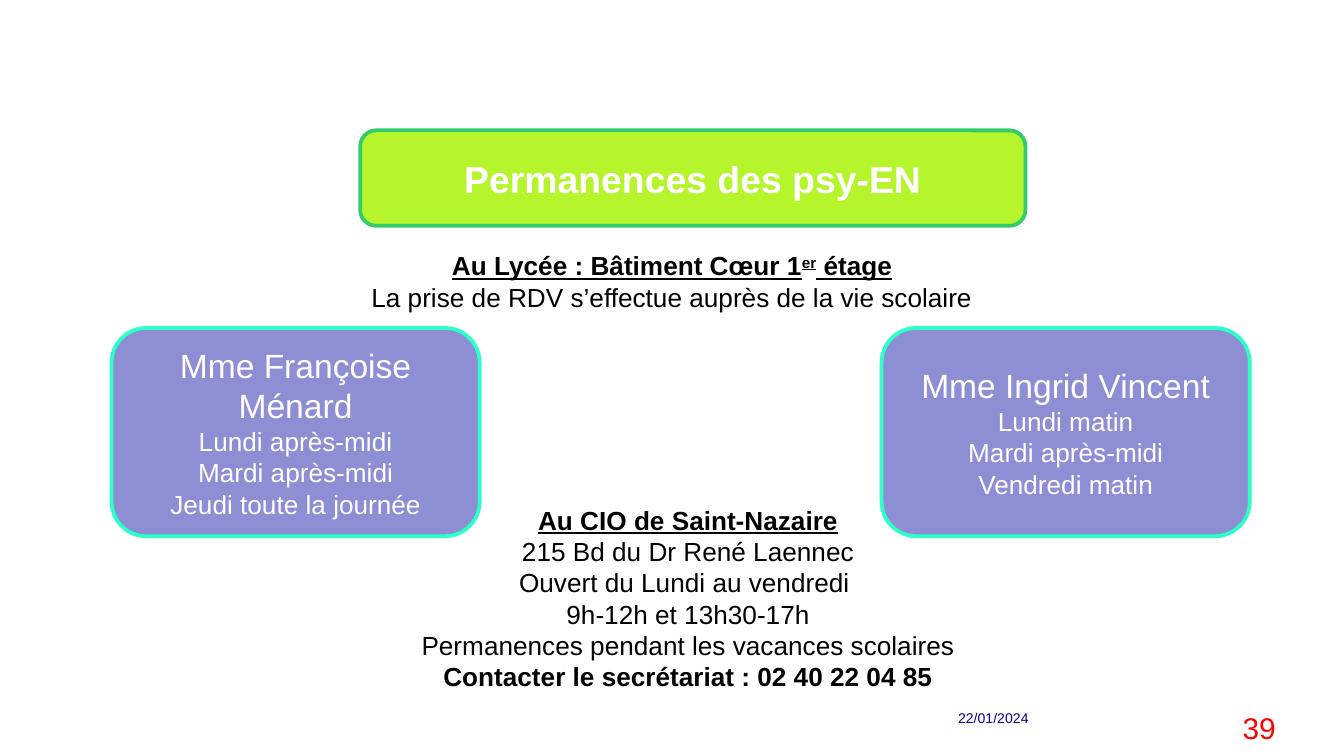
from pptx import Presentation, util as u
from pptx.dml.color import RGBColor
from pptx.enum import shapes, text

BLACK = RGBColor(0x00, 0x00, 0x00)
WHITE = RGBColor(0xFF, 0xFF, 0xFF)
RED = RGBColor(0xFF, 0x00, 0x00)
NAVY = RGBColor(0x00, 0x00, 0x91)
LIME = RGBColor(0xB6, 0xF4, 0x2C)
GREEN = RGBColor(0x34, 0xCB, 0x6A)
LAVENDER = RGBColor(0x8E, 0x8E, 0xD5)
AQUA = RGBColor(0x2C, 0xFF, 0xC8)

BANNER = "Permanences des psy-EN"
HEADING = dict(bold=True, underline=True)

# A line is a list of (text, format) runs
SCHOOL = [
    [("Au Lycée : Bâtiment Cœur 1", HEADING),
     ("er", dict(HEADING, baseline=30000)),
     (" étage", HEADING)],
    [("La prise de RDV s’effectue auprès de la vie scolaire", {})],
]
CENTRE = [
    [("Au CIO de Saint-Nazaire", HEADING)],
    [("215 Bd du Dr René Laennec", {})],
    [("Ouvert du Lundi au vendredi ", {})],
    [("9h-12h et 13h30-17h", {})],
    [("Permanences pendant les vacances scolaires", {})],
    [("Contacter le secrétariat : 02 40 22 04 85", dict(bold=True))],
]
COUNSELLORS = [
    ("Mme Françoise Ménard",
     ["Lundi après-midi", "Mardi après-midi", "Jeudi toute la journée"]),
    ("Mme Ingrid Vincent",
     ["Lundi matin", "Mardi après-midi", "Vendredi matin"]),
]
DATE, NUMBER = "22/01/2024", "39"

SLIDE_WIDTH = 10
SLIDE_HEIGHT = SLIDE_WIDTH * 9 / 16
CARD_LEFT, CARD_TOP, CARD_WIDTH, CARD_HEIGHT = 0.83, 2.44, 2.74, 1.55
CARD_STEP = 5.73
FOOTER_LEFT, FOOTER_TOP, FOOTER_WIDTH, FOOTER_HEIGHT = 7.03, 5.23, 1.28, 0.39


def add_run(paragraph, content, size=14, color=BLACK, bold=False,
            underline=False, baseline=0):
    run = paragraph.add_run()
    run.text = content
    font = run.font
    font.name, font.size = "Arial", u.Pt(size)
    font.bold, font.underline = bold, underline
    font.color.rgb = color
    if baseline:
        font._element.set("baseline", str(baseline))


def write(shape, lines, align=text.PP_ALIGN.CENTER,
          anchor=text.MSO_ANCHOR.TOP, **style):
    """Fill a shape with lines of runs; run formats override style."""
    frame = shape.text_frame
    frame.word_wrap = True
    frame.vertical_anchor = anchor
    for index, line in enumerate(lines):
        paragraph = frame.add_paragraph() if index else frame.paragraphs[0]
        paragraph.alignment = align
        for content, run_style in line:
            add_run(paragraph, content, **{**style, **run_style})


def add_text(slide, box, lines, **style):
    write(slide.shapes.add_textbox(*map(u.Inches, box)), lines, **style)


def add_panel(slide, box, lines, fill, outline, **style):
    panel = slide.shapes.add_shape(
        shapes.MSO_SHAPE.ROUNDED_RECTANGLE, *map(u.Inches, box))
    panel.fill.solid()
    panel.fill.fore_color.rgb = fill
    panel.line.color.rgb = outline
    panel.line.width = u.Pt(2)
    panel.shadow.inherit = False
    write(panel, lines, anchor=text.MSO_ANCHOR.MIDDLE, color=WHITE, **style)


def main():
    presentation = Presentation()
    presentation.slide_width = u.Inches(SLIDE_WIDTH)
    presentation.slide_height = u.Inches(SLIDE_HEIGHT)
    slide = presentation.slides.add_slide(presentation.slide_layouts[6])

    footers = [
        (DATE, dict(size=7.5, color=NAVY, align=text.PP_ALIGN.LEFT)),
        (NUMBER, dict(size=16, color=RED, align=text.PP_ALIGN.RIGHT)),
    ]
    for column, (content, style) in enumerate(footers):
        box = (FOOTER_LEFT + column * FOOTER_WIDTH, FOOTER_TOP,
               FOOTER_WIDTH, FOOTER_HEIGHT)
        add_text(slide, box, [[(content, {})]], **style)

    add_panel(slide, (2.68, 0.97, 4.95, 0.71), [[(BANNER, {})]],
              LIME, GREEN, size=20, bold=True)
    add_text(slide, (2.5, 1.81, 5, 0.57), SCHOOL)
    add_text(slide, (2.62, 3.7, 5, 1.75), CENTRE)

    for column, (name, slots) in enumerate(COUNSELLORS):
        box = (CARD_LEFT + column * CARD_STEP, CARD_TOP,
               CARD_WIDTH, CARD_HEIGHT)
        lines = [[(name, dict(size=18))]] + [[(slot, {})] for slot in slots]
        add_panel(slide, box, lines, LAVENDER, AQUA)

    presentation.save("out.pptx")


if __name__ == "__main__":
    main()
